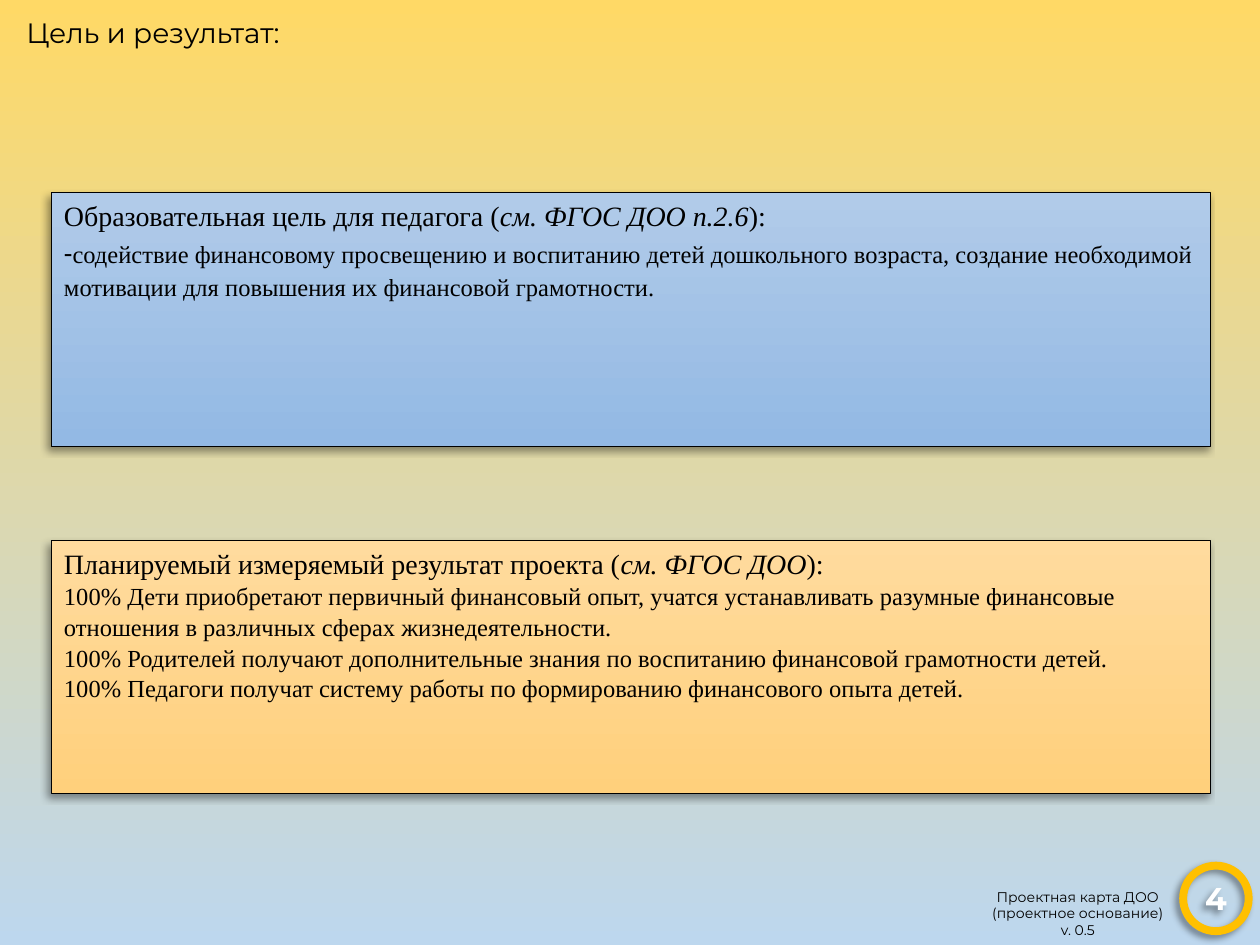
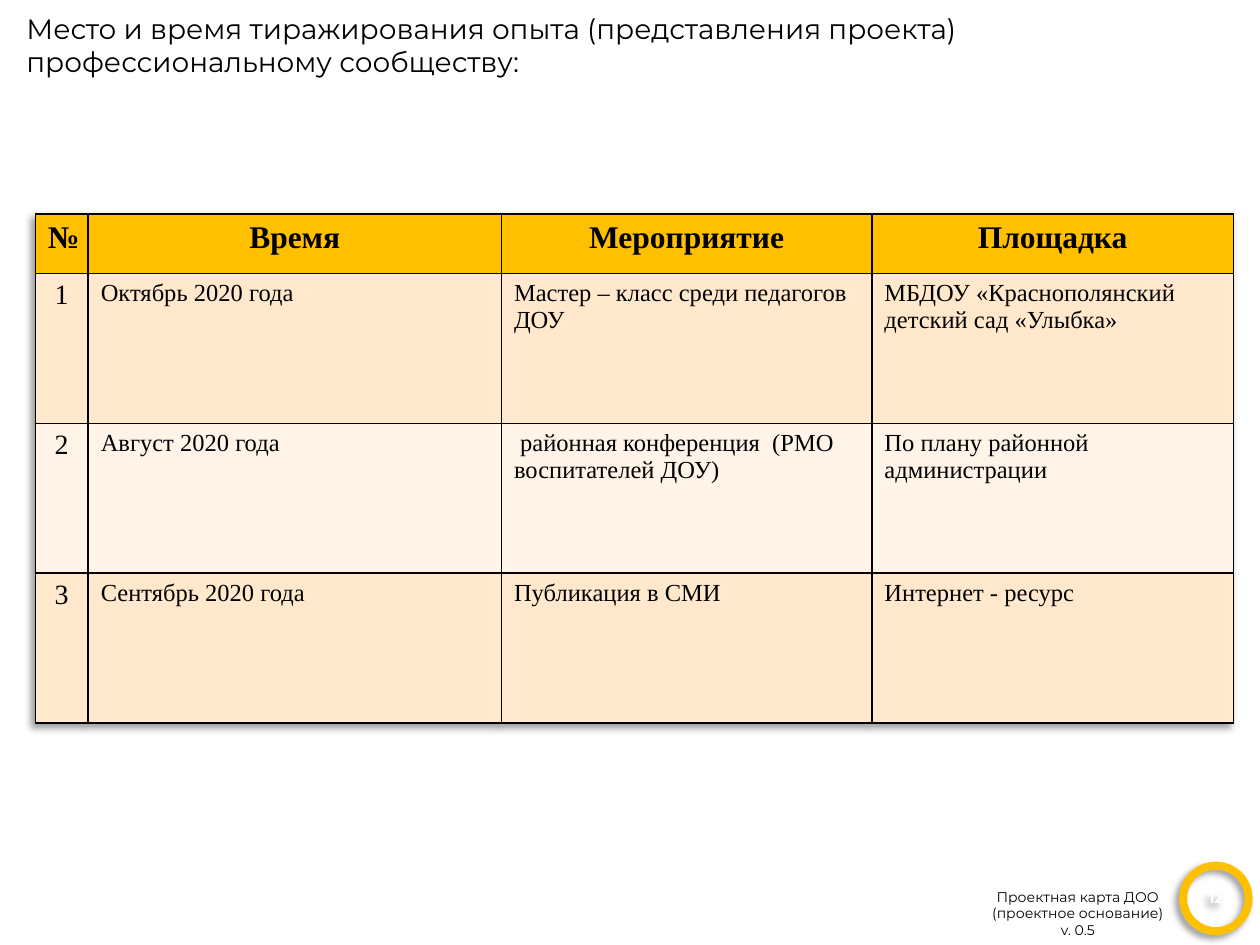
from lxml import etree
from pptx import Presentation
from pptx.dml.color import RGBColor
from pptx.enum.shapes import MSO_SHAPE
from pptx.enum.text import MSO_ANCHOR, MSO_AUTO_SIZE, PP_ALIGN
from pptx.oxml.ns import qn
from pptx.util import Inches, Pt

COLORS = {
    "black": "000000", "white": "FFFFFF", "gold": "FFC000",
    "sky_top": "FFD966", "sky_bottom": "BDD7EE",
    "goal_top": "B1CBE9", "goal_bottom": "93B9E4",
    "result_top": "FFDB9E", "result_bottom": "FFD07C",
    "band_dark": "FFE8CC", "band_light": "FFF4E7",
}
HEADING_FONT = "Montserrat"
BODY_FONT = "Times New Roman"
FOOTER_LINES = ["Проектная карта ДОО", "(проектное основание)", "v. 0.5"]

GOAL = [
    [("Образовательная цель для педагога (", {}), ("см. ФГОС ДОО п.2.6", {"italic": True}), ("):", {})],
    [("-", {"font": "Calibri"}),
     ("содействие финансовому просвещению и воспитанию детей дошкольного возраста, "
      "создание необходимой мотивации для повышения их финансовой грамотности.", {"size": 14})],
]
RESULT = [
    [("Планируемый измеряемый результат проекта (", {}), ("см. ФГОС ДОО", {"italic": True}), ("):", {})],
    [("100% Дети приобретают первичный финансовый опыт, учатся устанавливать разумные "
      "финансовые отношения в различных сферах жизнедеятельности.", {"size": 14})],
    [("100% Родителей получают дополнительные знания по воспитанию финансовой "
      "грамотности детей.", {"size": 14})],
    [("100% Педагоги получат систему работы по формированию финансового опыта детей.", {"size": 14})],
]
EVENTS = [
    ["№", "Время", "Мероприятие", "Площадка"],
    ["1", "Октябрь 2020 года", "Мастер – класс среди педагогов  ДОУ",
     "МБДОУ «Краснополянский детский сад «Улыбка»"],
    ["2", "Август 2020 года", " районная конференция  (РМО воспитателей ДОУ)",
     "По плану районной администрации"],
    ["3", "Сентябрь 2020 года", "Публикация в СМИ", "Интернет - ресурс"],
]


def color(name):
    return RGBColor.from_string(COLORS[name])


def write_text(paragraph, text, font=BODY_FONT, size=16, fill="black",
               bold=False, italic=False, align=PP_ALIGN.LEFT):
    paragraph.alignment = align
    run = paragraph.add_run()
    run.text = text
    run.font.name = font
    run.font.size = Pt(size)
    run.font.bold = bold
    run.font.italic = italic
    run.font.color.rgb = color(fill)


def next_paragraph(text_frame, index):
    return text_frame.add_paragraph() if index else text_frame.paragraphs[0]


def set_gradient(fill, top, bottom):
    fill.gradient()
    fill.gradient_angle = 270
    for stop, name, position in zip(fill.gradient_stops, (top, bottom), (0, 1)):
        stop.color.rgb = color(name)
        stop.position = position


def build_shadow():
    effects = etree.Element(qn("a:effectLst"))
    shadow = etree.SubElement(effects, qn("a:outerShdw"), blurRad=str(Pt(4)), dist=str(Pt(3)),
                              dir=str(135 * 60000), algn="tr", rotWithShape="0")
    shade = etree.SubElement(shadow, qn("a:srgbClr"), val=COLORS["black"])
    etree.SubElement(shade, qn("a:alpha"), val="40000")
    return effects


def add_outlined_shape(slide, kind, position, line, width):
    shape = slide.shapes.add_shape(kind, *map(Inches, position))
    shape.shadow.inherit = False
    properties = shape._element.spPr
    properties.replace(properties.find(qn("a:effectLst")), build_shadow())
    shape.fill.background()
    shape.line.color.rgb = color(line)
    shape.line.width = Pt(width)
    return shape


def add_title(slide, text, top, height):
    title = slide.shapes.title
    title.left, title.top, title.width, title.height = map(Inches, (0.11, top, 8.22, height))
    text_frame = title.text_frame
    text_frame.word_wrap = True
    text_frame.auto_size = MSO_AUTO_SIZE.NONE
    text_frame.vertical_anchor = MSO_ANCHOR.TOP
    write_text(text_frame.paragraphs[0], text, font=HEADING_FONT)


def add_panel(slide, top, gradient, lines, spacing):
    panel = add_outlined_shape(slide, MSO_SHAPE.RECTANGLE, (0.41, top, 9.2, 2.01), "black", 0.5)
    set_gradient(panel.fill, *gradient)
    panel.text_frame.word_wrap = True
    panel.text_frame.vertical_anchor = MSO_ANCHOR.TOP
    for index, parts in enumerate(lines):
        paragraph = next_paragraph(panel.text_frame, index)
        paragraph.line_spacing = spacing if index else 1.0
        for text, text_format in parts:
            write_text(paragraph, text, **text_format)


def add_footer(slide, number, number_size):
    # Project caption
    caption = slide.shapes.add_textbox(*map(Inches, (7.72, 7, 1.67, 0.5)))
    caption.text_frame.word_wrap = False
    for index, line in enumerate(FOOTER_LINES):
        write_text(next_paragraph(caption.text_frame, index), line,
                   font=HEADING_FONT, size=8, align=PP_ALIGN.CENTER)
    # Page number ring
    ring = add_outlined_shape(slide, MSO_SHAPE.OVAL, (9.39, 6.87, 0.52, 0.52), "gold", 4.5)
    ring.text_frame.word_wrap = False
    ring.text_frame.vertical_anchor = MSO_ANCHOR.MIDDLE
    write_text(ring.text_frame.paragraphs[0], number, font=HEADING_FONT, size=number_size,
               fill="white", bold=True, align=PP_ALIGN.CENTER)


def set_cell_borders(cell):
    properties = cell._tc.get_or_add_tcPr()
    for index, side in enumerate(("lnL", "lnR", "lnT", "lnB")):
        border = etree.Element(qn("a:" + side), w=str(Pt(1)))
        line_fill = etree.SubElement(border, qn("a:solidFill"))
        etree.SubElement(line_fill, qn("a:srgbClr"), val=COLORS["black"])
        properties.insert(index, border)


def add_events_table(slide):
    widths = [0.42, 3.28, 2.94, 2.87]
    heights = [0.47, 1.19, 1.19, 1.19]
    frame = slide.shapes.add_table(len(heights), len(widths), Inches(0.28), Inches(1.7),
                                   Inches(sum(widths)), Inches(sum(heights)))
    table = frame.table
    table._tbl.tblPr.insert(0, build_shadow())
    for column, width in zip(table.columns, widths):
        column.width = Inches(width)
    for row, height in zip(table.rows, heights):
        row.height = Inches(height)
    for row_index, values in enumerate(EVENTS):
        is_header = row_index == 0
        band = "gold" if is_header else ("band_light", "band_dark")[row_index % 2]
        for column_index, text in enumerate(values):
            is_number = column_index == 0
            cell = table.cell(row_index, column_index)
            cell.fill.solid()
            cell.fill.fore_color.rgb = color(band)
            set_cell_borders(cell)
            write_text(cell.text_frame.paragraphs[0], text,
                       size=18 if is_header else 16 if is_number else 14, bold=is_header,
                       align=PP_ALIGN.CENTER if is_header or is_number else PP_ALIGN.LEFT)


def main():
    presentation = Presentation()
    presentation.slide_width, presentation.slide_height = Inches(10), Inches(7.5)
    title_only = presentation.slide_layouts[5]

    # Goal and result
    slide = presentation.slides.add_slide(title_only)
    set_gradient(slide.background.fill, "sky_top", "sky_bottom")
    add_title(slide, "Цель и результат:", 0.07, 0.37)
    add_panel(slide, 1.53, ("goal_top", "goal_bottom"), GOAL, 1.1)
    add_panel(slide, 4.29, ("result_top", "result_bottom"), RESULT, 1.04)
    add_footer(slide, "4", 18)

    # Sharing the experience
    slide = presentation.slides.add_slide(title_only)
    slide.background.fill.solid()
    slide.background.fill.fore_color.rgb = color("white")
    add_title(slide, "Место и время тиражирования опыта (представления проекта) "
              "профессиональному сообществу:", 0.04, 0.64)
    add_footer(slide, "12", 8)
    add_events_table(slide)

    presentation.save("out.pptx")


if __name__ == "__main__":
    main()
